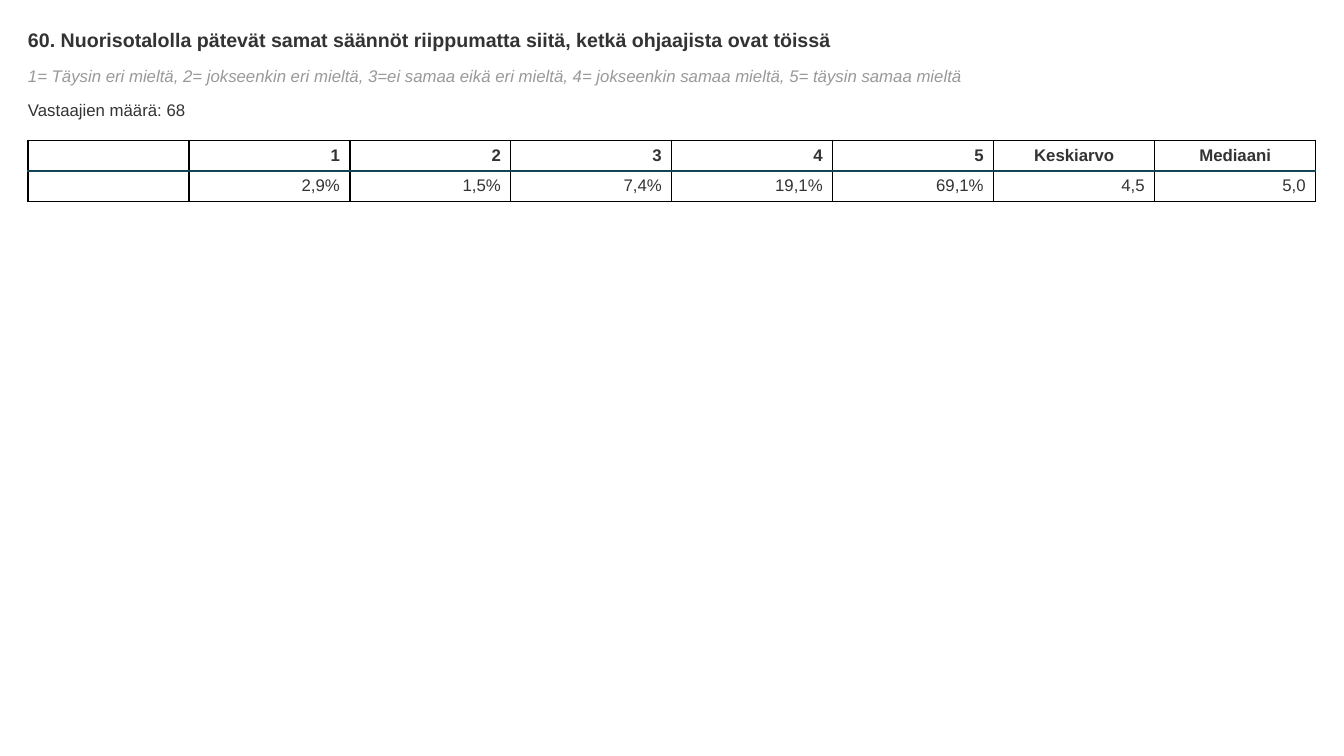
from lxml import etree
from pptx import Presentation
from pptx.dml.color import RGBColor
from pptx.enum import text
from pptx.oxml import ns
from pptx.util import Pt

COLORS = {"ink": "333333", "muted": "999999", "grid": "000000", "rule": "124456"}
LEFT, WIDTH, ROW_HEIGHT = 20, 920, 21.6
HEADINGS = ["", "1", "2", "3", "4", "5", "Keskiarvo", "Mediaani"]
RESULTS = ["", "2,9%", "1,5%", "7,4%", "19,1%", "69,1%", "4,5", "5,0"]


def style_font(font, color="ink", size=12, bold=False, italic=False):
    font.name = "Arial"
    font.size = Pt(size)
    font.bold = bold
    font.italic = italic
    font.color.rgb = RGBColor.from_string(COLORS[color])


def add_line(page, top, height, wording, **style):
    box = page.shapes.add_textbox(Pt(LEFT), Pt(top), Pt(WIDTH), Pt(height))
    frame = box.text_frame
    frame.margin_left = frame.margin_right = 0
    frame.margin_top = frame.margin_bottom = 0
    frame.word_wrap = True
    frame.auto_size = text.MSO_AUTO_SIZE.SHAPE_TO_FIT_TEXT
    para = frame.paragraphs[0]
    para.text = wording
    style_font(para.font, **style)


def add_border(cell, side, color, width):
    properties = cell._tc.get_or_add_tcPr()
    line = etree.SubElement(properties, ns.qn(f"a:ln{side}"), w=str(Pt(width)))
    fill = etree.SubElement(line, ns.qn("a:solidFill"))
    etree.SubElement(fill, ns.qn("a:srgbClr"), val=COLORS[color])


def fill_cell(cell, wording, is_heading):
    para = cell.text_frame.paragraphs[0]
    para.text = wording
    centred = is_heading and wording.isalpha()
    para.alignment = text.PP_ALIGN.CENTER if centred else text.PP_ALIGN.RIGHT
    style_font(para.font, bold=is_heading)
    if not wording:
        etree.SubElement(para._p, ns.qn("a:endParaRPr"), sz="1200")
    rule_side = "B" if is_heading else "T"
    for side in "LRTB":
        color, width = ("rule", 2) if side == rule_side else ("grid", 1)
        add_border(cell, side, color, width)
    cell.fill.background()
    cell.margin_top = cell.margin_bottom = Pt(3.6)
    cell.vertical_anchor = text.MSO_ANCHOR.MIDDLE


def add_results(page, top):
    rows = [HEADINGS, RESULTS]
    table = page.shapes.add_table(
        len(rows), len(HEADINGS), Pt(LEFT), Pt(top), Pt(WIDTH), Pt(ROW_HEIGHT * len(rows))
    ).table
    table.first_row = table.horz_banding = False
    for column in table.columns:
        column.width = Pt(WIDTH / len(HEADINGS))
    for row_index, row in enumerate(rows):
        table.rows[row_index].height = Pt(ROW_HEIGHT)
        for column_index, wording in enumerate(row):
            fill_cell(table.cell(row_index, column_index), wording, row_index == 0)


def main():
    deck = Presentation()
    deck.slide_width, deck.slide_height = Pt(960), Pt(540)
    page = deck.slides.add_slide(deck.slide_layouts[6])
    add_line(
        page, 20, 16.8,
        "60. Nuorisotalolla pätevät samat säännöt riippumatta siitä, ketkä ohjaajista ovat töissä",
        size=14, bold=True,
    )
    add_line(
        page, 46.8, 14.4,
        "1= Täysin eri mieltä, 2= jokseenkin eri mieltä, 3=ei samaa eikä eri mieltä, "
        "4= jokseenkin samaa mieltä, 5= täysin samaa mieltä",
        color="muted", italic=True,
    )
    add_line(page, 71.2, 14.4, "Vastaajien määrä: 68")
    add_results(page, 100.4)
    deck.save("out.pptx")


if __name__ == "__main__":
    main()
